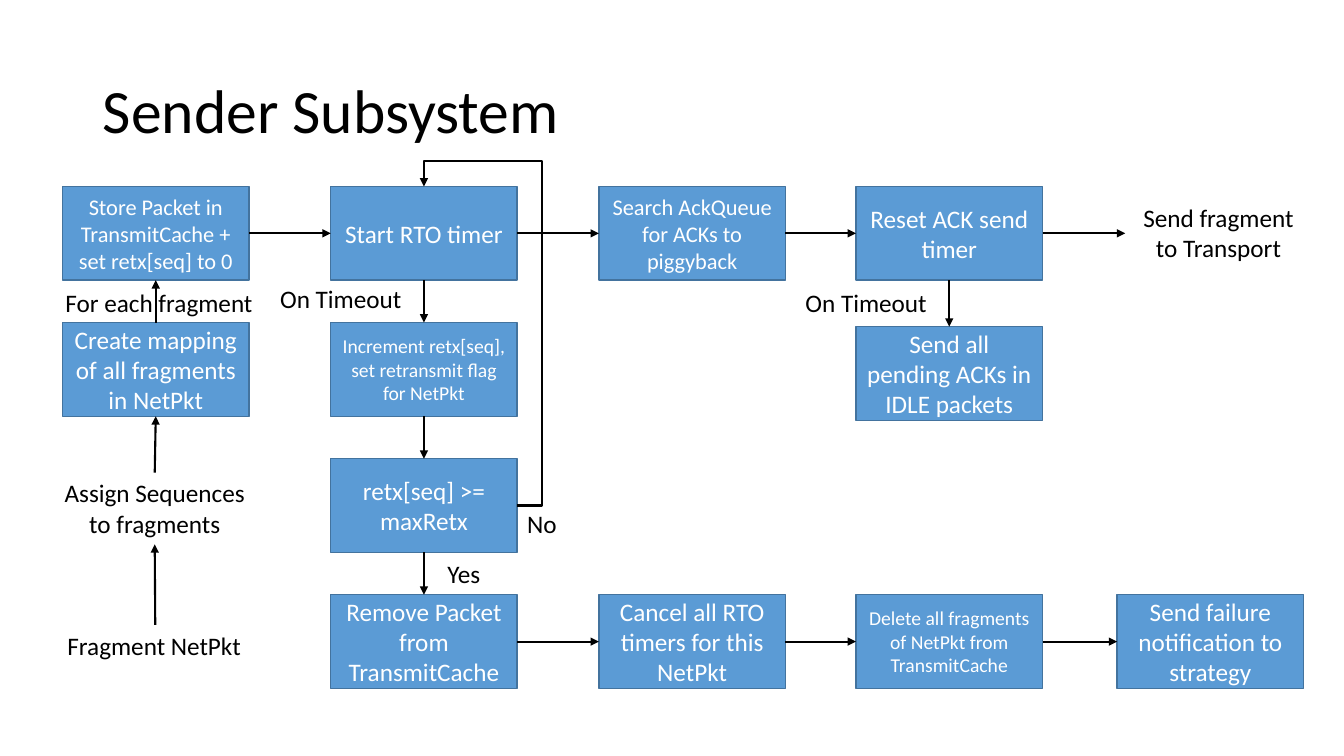
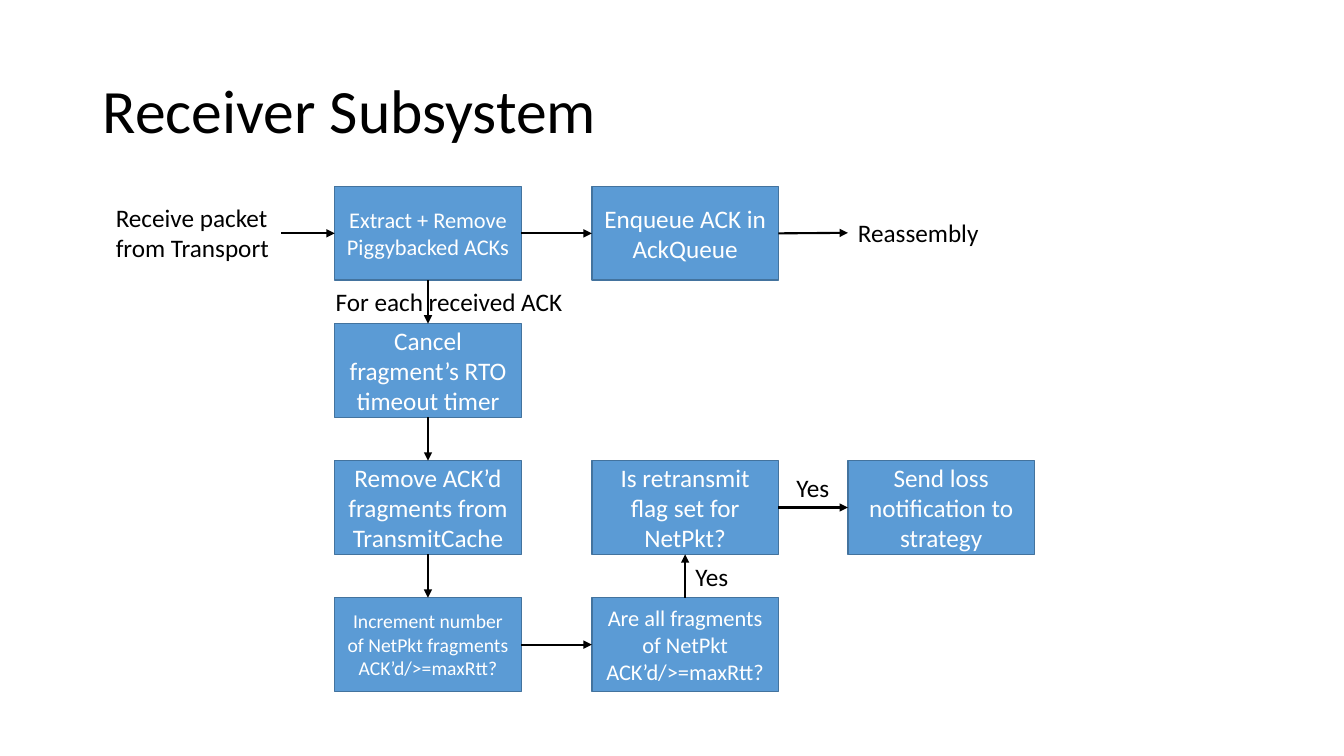
from dataclasses import dataclass

from lxml import etree
from pptx import Presentation
from pptx.dml.color import RGBColor
from pptx.enum.shapes import MSO_CONNECTOR, MSO_SHAPE
from pptx.enum.text import MSO_ANCHOR, MSO_AUTO_SIZE, PP_ALIGN
from pptx.oxml.ns import qn
from pptx.util import Inches, Pt

BLACK = RGBColor(0x00, 0x00, 0x00)
WHITE = RGBColor(0xFF, 0xFF, 0xFF)
BLUE = RGBColor(0x5B, 0x9B, 0xD5)
EDGE = RGBColor(0x43, 0x73, 0x9E)
FONT = "Calibri"

RECT = MSO_SHAPE.RECTANGLE
LINE = MSO_CONNECTOR.STRAIGHT
ELBOW = MSO_CONNECTOR.ELBOW
LEFT = PP_ALIGN.LEFT
MID = PP_ALIGN.CENTER
CENTRE = MSO_ANCHOR.MIDDLE
GROW = MSO_AUTO_SIZE.SHAPE_TO_FIT_TEXT
FIXED = MSO_AUTO_SIZE.NONE

# Connection sites of a rectangle
TOP, WEST, BASE, EAST = range(4)

BOX_W, BOX_H = 1.85, 0.93
ROW_TOP = 1.85


@dataclass(frozen=True)
class Box:
    key: str
    text: str
    col: int
    row: float
    size: int = 18


@dataclass(frozen=True)
class Label:
    key: str
    text: str
    x: float
    y: float
    w: float
    h: float = 0.4
    align: PP_ALIGN = LEFT
    wrap: bool = False


@dataclass(frozen=True)
class Link:
    start: str
    out: int
    end: str
    into: int
    bend: tuple[float, ...] = ()


@dataclass(frozen=True)
class Chart:
    title: str
    cols: tuple[float, ...]
    pitch: float
    boxes: tuple[Box, ...]
    labels: tuple[Label, ...]
    links: tuple[Link, ...]


SENDER = Chart(
    "Sender Subsystem",
    (0.62, 3.28, 5.94, 8.49, 11.08),
    1.35,
    (
        Box("store", "Store Packet in TransmitCache + set retx[seq] to 0", 0, 0, 16),
        Box("start", "Start RTO timer", 1, 0),
        Box("search", "Search AckQueue for ACKs to piggyback", 2, 0, 16),
        Box("reset", "Reset ACK send timer", 3, 0),
        Box("map", "Create mapping of all fragments in NetPkt", 0, 1),
        Box("count", "Increment retx[seq], set retransmit flag for NetPkt", 1, 1, 14),
        Box("idle", "Send all pending ACKs in IDLE packets", 3, 1.03),
        Box("limit", "retx[seq] >= maxRetx", 1, 2),
        Box("remove", "Remove Packet from TransmitCache", 1, 3),
        Box("cancel", "Cancel all RTO timers for this NetPkt", 2, 3),
        Box("delete", "Delete all fragments of NetPkt from TransmitCache", 3, 3, 14),
        Box("fail", "Send failure notification to strategy", 4, 3),
    ),
    (
        Label("send", "Send fragment to Transport", 11.16, 1.96, 1.85, 0.71, MID, True),
        Label("assign", "Assign Sequences\nto fragments", 0.53, 4.69, 2.01, 0.71, MID),
        Label("split", "Fragment NetPkt", 0.57, 6.2, 1.94),
        Label("each", "For each fragment", 0.55, 2.8, 2.08),
        Label("late", "On Timeout", 2.68, 2.76, 1.42),
        Label("due", "On Timeout", 7.89, 2.8, 1.42),
        Label("no", "No", 5.13, 4.99, 0.5),
        Label("yes", "Yes", 4.34, 5.49, 0.53),
    ),
    (
        Link("split", TOP, "assign", BASE),
        Link("assign", TOP, "map", BASE),
        Link("map", TOP, "store", BASE),
        Link("store", EAST, "start", WEST),
        Link("start", EAST, "search", WEST),
        Link("search", EAST, "reset", WEST),
        Link("reset", EAST, "send", WEST),
        Link("reset", BASE, "idle", TOP),
        Link("start", BASE, "count", TOP),
        Link("count", BASE, "limit", TOP),
        Link("limit", BASE, "remove", TOP),
        Link("limit", EAST, "start", TOP, (-0.27, 1.08)),
        Link("remove", EAST, "cancel", WEST),
        Link("cancel", EAST, "delete", WEST),
        Link("delete", EAST, "fail", WEST),
    ),
)

RECEIVER = Chart(
    "Receiver Subsystem",
    (3.32, 5.87, 8.41),
    1.36,
    (
        Box("extract", "Extract + Remove Piggybacked ACKs", 0, 0, 16),
        Box("queue", "Enqueue ACK in AckQueue", 1, 0),
        Box("cancel", "Cancel fragment’s RTO timeout timer", 0, 1),
        Box("remove", "Remove ACK’d fragments from TransmitCache", 0, 2),
        Box("flag", "Is retransmit flag set for NetPkt?", 1, 2),
        Box("loss", "Send loss notification to strategy", 2, 2),
        Box("count", "Increment number of NetPkt fragments ACK’d/>=maxRtt?", 0, 3, 14),
        Box("all", "Are all fragments of NetPkt ACK’d/>=maxRtt?", 1, 3, 16),
    ),
    (
        Label("packet", "Receive packet\nfrom Transport", 1.05, 1.96, 1.74, 0.71),
        Label("build", "Reassembly", 8.41, 2.11, 1.41),
        Label("each", "For each received ACK", 3.23, 2.79, 2.48),
        Label("yes", "Yes", 7.8, 4.64, 0.53),
        Label("done", "Yes", 6.8, 5.52, 0.53),
    ),
    (
        Link("packet", EAST, "extract", WEST),
        Link("extract", EAST, "queue", WEST),
        Link("queue", EAST, "build", WEST),
        Link("extract", BASE, "cancel", TOP),
        Link("cancel", BASE, "remove", TOP),
        Link("remove", BASE, "count", TOP),
        Link("count", EAST, "all", WEST),
        Link("all", TOP, "flag", BASE),
        Link("flag", EAST, "loss", WEST),
    ),
)


def write(frame, text: str, size: int, color: RGBColor, align: PP_ALIGN) -> None:
    """Fill a text frame, one paragraph a line."""
    for i, part in enumerate(text.split("\n")):
        para = frame.paragraphs[0] if i == 0 else frame.add_paragraph()
        para.alignment = align
        run = para.add_run()
        run.text = part
        run.font.name = FONT
        run.font.size = Pt(size)
        run.font.color.rgb = color


def add_title(slide, text: str) -> None:
    title = slide.shapes.title
    title.left, title.top = Inches(0.92), Inches(0.4)
    title.width, title.height = Inches(11.5), Inches(1.45)
    frame = title.text_frame
    frame.auto_size = FIXED
    frame.vertical_anchor = CENTRE
    write(frame, text, 44, BLACK, LEFT)
    frame.paragraphs[0].line_spacing = 0.9


def add_box(slide, box: Box, chart: Chart):
    x, y = chart.cols[box.col], ROW_TOP + box.row * chart.pitch
    shape = slide.shapes.add_shape(
        RECT, Inches(x), Inches(y), Inches(BOX_W), Inches(BOX_H))
    shape.shadow.inherit = False
    shape.fill.solid()
    shape.fill.fore_color.rgb = BLUE
    shape.line.color.rgb = EDGE
    shape.line.width = Pt(1)
    frame = shape.text_frame
    frame.word_wrap = True
    frame.vertical_anchor = CENTRE
    write(frame, box.text, box.size, WHITE, MID)
    return shape


def add_label(slide, label: Label):
    shape = slide.shapes.add_textbox(
        Inches(label.x), Inches(label.y), Inches(label.w), Inches(label.h))
    frame = shape.text_frame
    frame.word_wrap = label.wrap
    frame.auto_size = GROW
    write(frame, label.text, 18, BLACK, label.align)
    return shape


def add_link(slide, link: Link, nodes: dict) -> None:
    kind = ELBOW if link.bend else LINE
    wire = slide.shapes.add_connector(kind, 0, 0, 0, 0)
    wire.begin_connect(nodes[link.start], link.out)
    wire.end_connect(nodes[link.end], link.into)
    wire.line.color.rgb = BLACK
    wire.line.width = Pt(1.5)
    props = wire._element.spPr
    # Arrowhead, and no shadow
    etree.SubElement(props.find(qn("a:ln")), qn("a:tailEnd"), type="triangle")
    etree.SubElement(props, qn("a:effectLst"))
    # Route round the outside
    if link.bend:
        geom = props.find(qn("a:prstGeom"))
        geom.set("prst", "bentConnector4")
        guides = geom.find(qn("a:avLst"))
        for i, share in enumerate(link.bend, 1):
            etree.SubElement(guides, qn("a:gd"), name=f"adj{i}",
                             fmla=f"val {round(share * 100000)}")


def add_chart(deck, chart: Chart) -> None:
    slide = deck.slides.add_slide(deck.slide_layouts[5])
    add_title(slide, chart.title)
    nodes = {box.key: add_box(slide, box, chart) for box in chart.boxes}
    for label in chart.labels:
        nodes[label.key] = add_label(slide, label)
    for link in chart.links:
        add_link(slide, link, nodes)


def main() -> None:
    deck = Presentation()
    deck.slide_width, deck.slide_height = Inches(13.33), Inches(7.5)
    for chart in (SENDER, RECEIVER):
        add_chart(deck, chart)
    deck.save("out.pptx")


if __name__ == "__main__":
    main()
